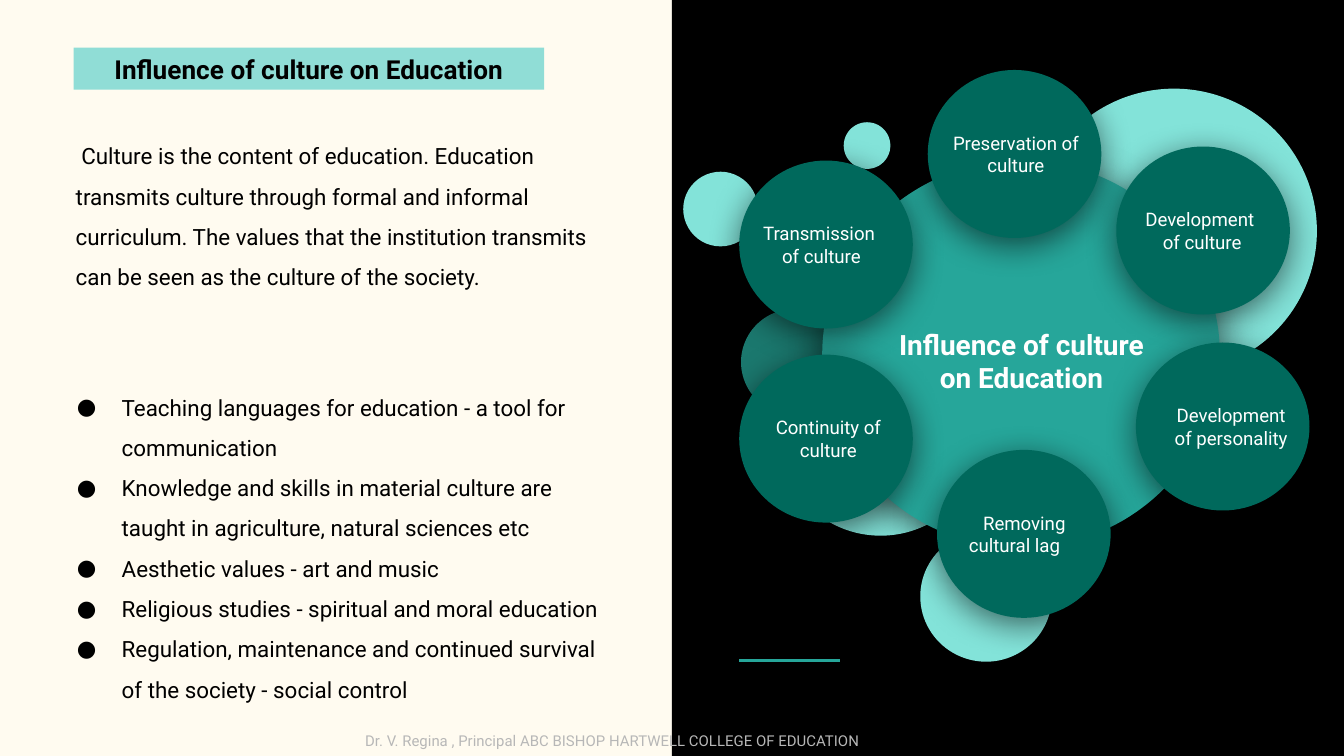
"""Build the slide on the influence of culture on education."""
import lxml.etree
import pptx
import pptx.dml.color
import pptx.enum.shapes
import pptx.enum.text
import pptx.oxml
import pptx.oxml.ns
import pptx.util

Pt = pptx.util.Pt
SHAPE = pptx.enum.shapes.MSO_SHAPE
ALIGN = pptx.enum.text.PP_ALIGN
ANCHOR = pptx.enum.text.MSO_ANCHOR
qn = pptx.oxml.ns.qn

COLORS = {
    "cream": "FFFBF0", "black": "000000", "white": "FFFFFF", "grey": "B7B7B7",
    "band": "90DDD6", "mint": "83E3D9", "shade": "1B786E",
    "teal": "26A69A", "deep": "00695C",
}

TITLE = "Influence of culture on Education"
INTRO = (" Culture is the content of education. Education transmits culture through "
         "formal and informal curriculum. The values that the institution transmits "
         "can be seen as the culture of the society.")
POINTS = [
    "Teaching languages for education - a tool for communication",
    "Knowledge and skills in material culture are taught in agriculture, natural sciences etc",
    "Aesthetic values - art and music",
    "Religious studies - spiritual and moral education",
    "Regulation, maintenance and continued survival of the society - social control",
]
CREDIT = "Dr. V. Regina , Principal ABC BISHOP HARTWELL COLLEGE OF EDUCATION"

BUBBLES = [
    ((493, 284.5, 70.5, 70), "mint"),
    ((366, 92, 40, 40), "mint"),
    ((417, 178.5, 109.5, 108.5), "mint"),
    ((552.5, 47.5, 153, 152.5), "mint"),
    ((397, 165.5, 57.5, 57), "shade"),
    ((452, 65.5, 25, 25), "mint"),
]
HUB = (440.5, 86, 213, 207.5)
HUB_LABEL = (466, 144, 162.5, 98.5)
NODE_W, NODE_H = 93, 90
LABEL_DROP, LABEL_H = 15, 60
NODES = [
    {"at": (396, 86), "lines": ["Transmission ", "of culture"], "shift": -1, "width": 90},
    {"at": (497, 37.5), "lines": ["Preservation of culture"], "shift": 5.5, "width": 83.5},
    {"at": (598, 78.5), "lines": ["Development ", "of culture"], "shift": -0.5, "width": 93},
    {"at": (396, 190), "lines": ["Continuity of culture"], "shift": 6, "width": 83.5},
    {"at": (502, 241), "lines": ["Removing", "cultural lag"], "shift": 5, "width": 83.5},
    {"at": (608.5, 183.5), "lines": ["Development", "of personality"], "shift": 6, "width": 90},
]

FRAME = {
    "word_wrap": True, "auto_size": pptx.enum.text.MSO_AUTO_SIZE.NONE,
    "margin_left": Pt(7.2), "margin_right": Pt(7.2),
    "margin_top": Pt(7.2), "margin_bottom": Pt(7.2),
}
PARAGRAPH = {"alignment": ALIGN.LEFT, "space_before": Pt(0), "space_after": Pt(0)}
CENTRED = {"alignment": ALIGN.CENTER}
SPACED = {"line_spacing": 1.5}


def apply(obj, values):
    for name, value in values.items():
        setattr(obj, name, value)


def rgb(name):
    return pptx.dml.color.RGBColor.from_string(COLORS[name])


def place(shape, box):
    apply(shape, dict(zip(("left", "top", "width", "height"), map(Pt, box))))


def write(shape, lines, size, color="black", bold=False, anchor=ANCHOR.TOP, para=None):
    tf = shape.text_frame
    apply(tf, {**FRAME, "vertical_anchor": anchor})
    for i, line in enumerate(lines):
        p = tf.add_paragraph() if i else tf.paragraphs[0]
        apply(p, {**PARAGRAPH, **(para or {})})
        r = p.add_run()
        r.text = line
        apply(r.font, {"name": "Roboto", "size": Pt(size), "bold": bold})
        r.font.color.rgb = rgb(color)
    return tf


def add_text(shapes, box, lines, size, **style):
    return write(shapes.add_textbox(*map(Pt, box)), lines, size, **style)


def add_solid(shapes, kind, box, color):
    sp = shapes.add_shape(kind, *map(Pt, box))
    sp.shadow.inherit = False
    sp.fill.solid()
    sp.fill.fore_color.rgb = rgb(color)
    sp.line.fill.background()
    return sp


def add_raised(shapes, box, color):
    sp = add_solid(shapes, SHAPE.OVAL, box, color)
    effects = sp._element.spPr.find(qn("a:effectLst"))
    shadow = lxml.etree.SubElement(
        effects, qn("a:outerShdw"), blurRad=str(Pt(18)), dist=str(Pt(4)),
        dir="5400000", algn="bl", rotWithShape="0")
    tone = lxml.etree.SubElement(shadow, qn("a:srgbClr"), val=COLORS["black"])
    lxml.etree.SubElement(tone, qn("a:alpha"), val="55000")


def add_bullet(p):
    pPr = p._p.get_or_add_pPr()
    pPr.set("marL", str(Pt(36)))
    pPr.set("indent", str(Pt(-24)))
    tone = lxml.etree.SubElement(pPr, qn("a:buClr"))
    lxml.etree.SubElement(tone, qn("a:srgbClr"), val=COLORS["black"])
    lxml.etree.SubElement(pPr, qn("a:buFont"), typeface="Roboto")
    lxml.etree.SubElement(pPr, qn("a:buChar"), char="●")


def add_diagram(s):
    shapes = s.shapes.add_group_shape().shapes
    for box, color in BUBBLES:
        add_solid(shapes, SHAPE.OVAL, box, color)
    add_raised(shapes, HUB, "teal")
    add_text(shapes, HUB_LABEL, [TITLE], 15, color="white", bold=True,
             anchor=ANCHOR.MIDDLE, para=CENTRED)
    for node in NODES:
        x, y = node["at"]
        add_raised(shapes, (x, y, NODE_W, NODE_H), "deep")
        box = (x + node["shift"], y + LABEL_DROP, node["width"], LABEL_H)
        tf = add_text(shapes, box, node["lines"], 10, color="white",
                      anchor=ANCHOR.MIDDLE, para=CENTRED)
        if node["lines"][-1] == "cultural lag":
            p = tf.paragraphs[-1]
            p.alignment = ALIGN.LEFT
            p._p.get_or_add_pPr().set("marL", str(Pt(5)))


def main():
    prs = pptx.Presentation()
    apply(prs, {"slide_width": Pt(720), "slide_height": Pt(405)})
    s = prs.slides.add_slide(prs.slide_layouts[1])
    s.background.fill.solid()
    s.background.fill.fore_color.rgb = rgb("cream")

    title, body = s.placeholders
    place(title, (39.5, 25.5, 252, 22.5))
    title.fill.solid()
    title.fill.fore_color.rgb = rgb("band")
    write(title, [TITLE], 14, bold=True, anchor=ANCHOR.MIDDLE, para=CENTRED)
    place(body, (22, 196.5, 316, 191.5))
    for p in write(body, POINTS, 12, para=SPACED).paragraphs:
        add_bullet(p)

    add_solid(s.shapes, SHAPE.RECTANGLE, (360, 0, 360, 405), "black")
    rule = s.shapes.add_connector(
        pptx.enum.shapes.MSO_CONNECTOR.STRAIGHT, Pt(396), Pt(354), Pt(450), Pt(354))
    rule.line.color.rgb = rgb("teal")
    rule.line.width = Pt(1.5)
    lxml.etree.SubElement(rule._element.spPr, qn("a:effectLst"))

    add_diagram(s)
    add_text(s.shapes, (33.5, 62, 293, 90), [INTRO], 12, para=SPACED)
    add_text(s.shapes, (188.5, 384.5, 392.5, 20), [CREDIT], 8, color="grey")
    prs.save("out.pptx")


if __name__ == "__main__":
    main()
